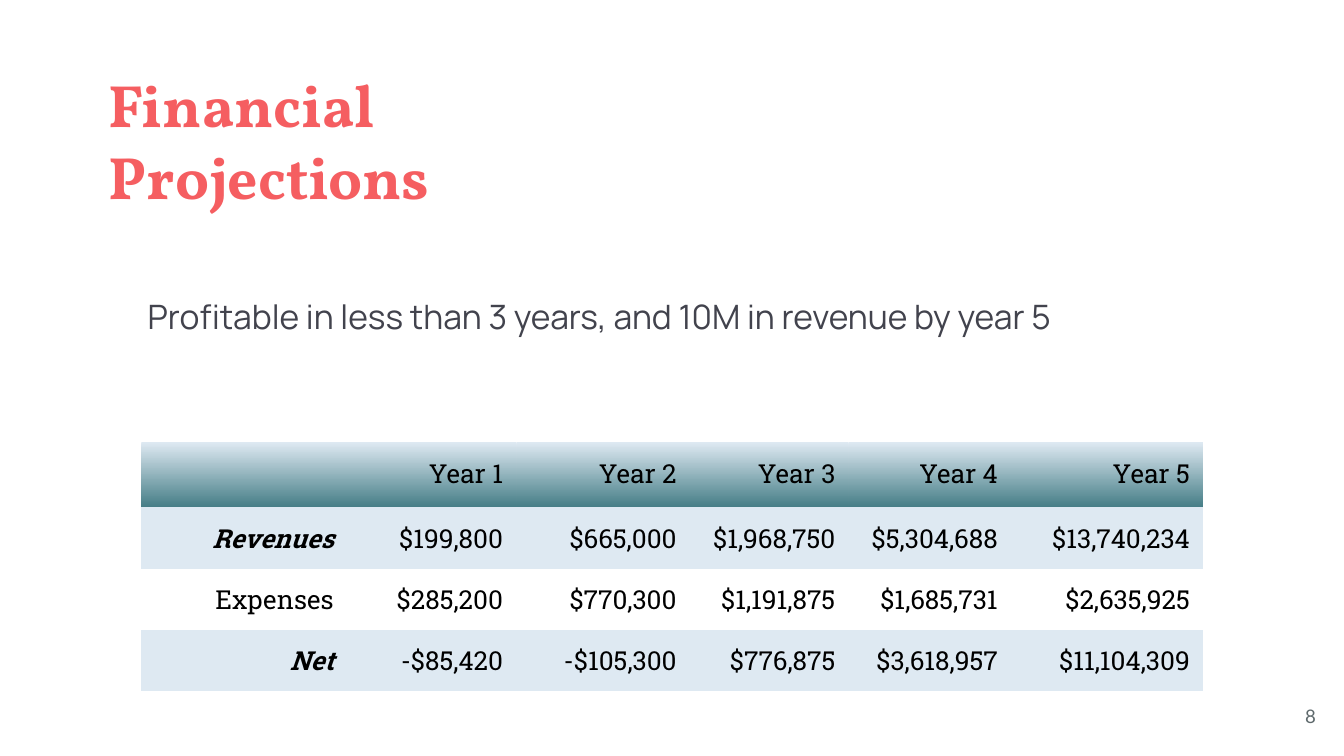
"""Build the financial projections slide with its five-year table."""
from pptx import Presentation
from pptx import util as u
from pptx.dml.color import RGBColor
from pptx.enum import text
from pptx.oxml import ns

COLORS = {"coral": "F55E61", "slate": "42434D", "gray": "5E696C",
          "black": "000000", "ice": "DEE9F2", "teal": "457D86"}
PLAIN_TABLE_STYLE = "{2D5ABB26-0587-4C30-8999-92F81FD0307C}"


def write(frame, wording, font, size, color, align=text.PP_ALIGN.LEFT, bold=False, italic=False):
    paragraph = frame.paragraphs[0]
    paragraph.alignment = align
    paragraph.space_before = u.Pt(0)
    run = paragraph.add_run()
    run.text = wording
    run.font.name = font
    run.font.size = u.Pt(size)
    run.font.bold = bold
    run.font.italic = italic
    run.font.color.rgb = RGBColor.from_string(COLORS[color])
    return paragraph


def set_frame(frame, anchor):
    frame.word_wrap = True
    frame.auto_size = text.MSO_AUTO_SIZE.NONE
    frame.vertical_anchor = anchor
    frame.margin_left = frame.margin_right = u.Cm(0.25)
    frame.margin_top = frame.margin_bottom = u.Cm(0.25)


deck = Presentation()
deck.slide_width, deck.slide_height = u.Cm(25.4), u.Cm(14.29)
slide = deck.slides.add_slide(deck.slide_layouts[1])

heading = slide.shapes.title
heading.left, heading.top, heading.width, heading.height = u.Cm(1.8), u.Cm(1.04), u.Cm(9.35), u.Cm(7.32)
set_frame(heading.text_frame, text.MSO_ANCHOR.TOP)
write(heading.text_frame, "Financial Projections", "Vollkorn", 32, "coral", bold=True)

summary = slide.placeholders[1]
summary.left, summary.top, summary.width, summary.height = u.Cm(2.54), u.Cm(5.23), u.Cm(21.49), u.Cm(2.16)
set_frame(summary.text_frame, text.MSO_ANCHOR.TOP)
claim = write(summary.text_frame, "Profitable in less than 3 years, and 10M in revenue by year 5",
              "Manrope", 18, "slate")
claim.line_spacing = 1.15
claim_format = claim._p.get_or_add_pPr()
claim_format.set("marL", "0")
claim_format.set("indent", "0")
claim_format.append(claim_format.makeelement(ns.qn("a:buNone"), {}))

page_number = slide.shapes.add_textbox(u.Cm(23.6), u.Cm(13), u.Cm(1.52), u.Cm(1.09))
set_frame(page_number.text_frame, text.MSO_ANCHOR.MIDDLE)
write(page_number.text_frame, "8", "Lato", 10, "gray", text.PP_ALIGN.RIGHT)

projections = [
    ["", "Year 1", "Year 2", "Year 3", "Year 4", "Year 5"],
    ["Revenues", "$199,800", "$665,000", "$1,968,750", "$5,304,688", "$13,740,234"],
    ["Expenses", "$285,200", "$770,300", "$1,191,875", "$1,685,731", "$2,635,925"],
    ["Net", "-$85,420", "-$105,300", "$776,875", "$3,618,957", "$11,104,309"],
]
column_widths = [3.89, 3.2, 3.28, 3, 3.07, 3.63]
row_heights = [1.23, 1.16, 1.16, 1.16]

table = slide.shapes.add_table(len(projections), len(column_widths), u.Cm(2.67), u.Cm(8.36),
                               u.Cm(sum(column_widths)), u.Cm(sum(row_heights))).table
table.first_row = table.horz_banding = False
table._tbl.tblPr.find(ns.qn("a:tableStyleId")).text = PLAIN_TABLE_STYLE
for column, width in zip(table.columns, column_widths):
    column.width = u.Cm(width)

for row_index, figures in enumerate(projections):
    table.rows[row_index].height = u.Cm(row_heights[row_index])
    for column_index, figure in enumerate(figures):
        cell = table.cell(row_index, column_index)
        cell.margin_left = cell.margin_right = u.Cm(0.25)
        cell.margin_top = cell.margin_bottom = u.Cm(0.25)
        emphasis = column_index == 0 and figure in ("Revenues", "Net")
        write(cell.text_frame, figure, "Roboto Slab", 14, "black", text.PP_ALIGN.RIGHT, emphasis, emphasis)
        if row_index == 0:
            cell.fill.gradient()
            cell.fill.gradient_angle = 270
            for stop, shade in zip(cell.fill.gradient_stops, ("ice", "teal")):
                stop.color.rgb = RGBColor.from_string(COLORS[shade])
        elif row_index % 2:
            cell.fill.solid()
            cell.fill.fore_color.rgb = RGBColor.from_string(COLORS["ice"])
        else:
            cell.fill.background()

deck.save("out.pptx")
